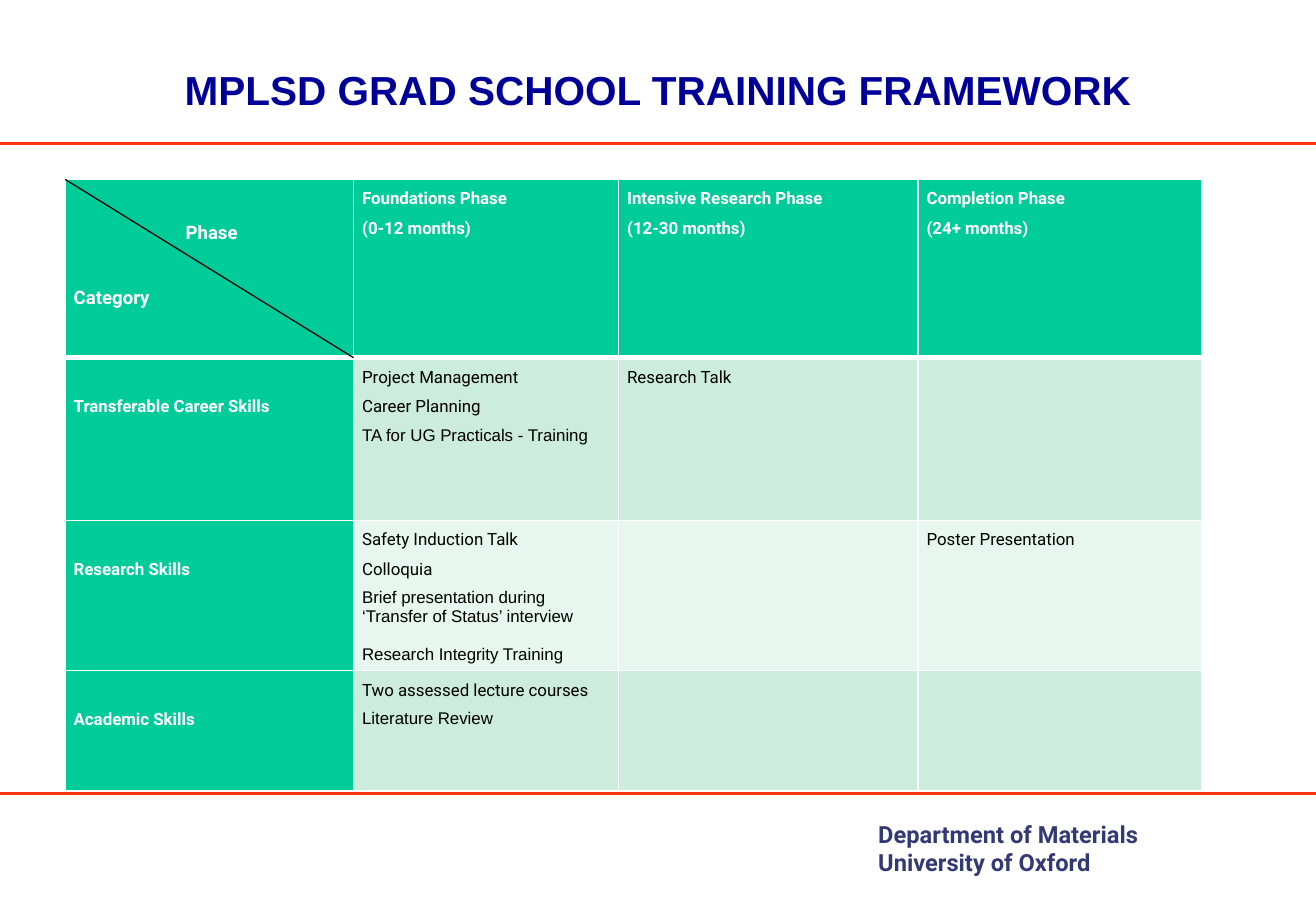
import pptx
import pptx.dml.color
import pptx.enum.shapes
import pptx.enum.text
import pptx.oxml
import pptx.oxml.ns
import pptx.util

Cm = pptx.util.Cm
Pt = pptx.util.Pt
RGBColor = pptx.dml.color.RGBColor
ALIGN = pptx.enum.text.PP_ALIGN
ANCHOR = pptx.enum.text.MSO_ANCHOR

WHITE = RGBColor(0xFF, 0xFF, 0xFF)
BLACK = RGBColor(0, 0, 0)
NAVY = RGBColor(0, 0, 0x99)
SLATE = RGBColor(0x33, 0x39, 0x75)
RED = RGBColor(0xFE, 0x37, 0x0F)
GREEN = RGBColor(0, 0xCC, 0x99)
MINT = RGBColor(0xCC, 0xEC, 0xDE)
PALE = RGBColor(0xE7, 0xF6, 0xEF)

WIDE, HIGH = Cm(27.51), Cm(19.05)
COLS = [Cm(6.03), Cm(5.54), Cm(6.26), Cm(5.94)]
ROWS = [Cm(3.73), Cm(3.4), Cm(3), Cm(2.52)]
SANS = {"face": "Arial"}
TIGHT = {"face": "Arial", "line": 1}

HEADS = [
    ("Foundations Phase", "(0-12 months)"),
    ("Intensive Research Phase", "(12-30 months)"),
    ("Completion Phase", "(24+ months)"),
]
SKILLS = [
    ("Transferable Career Skills", MINT, [
        [("Project Management", {}), ("Career Planning", {}),
         ("TA for UG Practicals - Training", SANS)],
        [("Research Talk", {})],
        [],
    ]),
    ("Research Skills", PALE, [
        [("Safety Induction Talk", {}), ("Colloquia", {}),
         ("Brief presentation during", SANS),
         ("‘Transfer of Status’ interview", TIGHT),
         ("Research Integrity Training", {**TIGHT, "before": 11})],
        [],
        [("Poster Presentation", {})],
    ]),
    ("Academic Skills", MINT, [
        [("Two assessed lecture courses", {}), ("Literature Review", SANS)],
        [],
        [],
    ]),
]


def write(frame, text, size=10, face="Roboto", color=BLACK, bold=False,
          align=ALIGN.JUSTIFY, line=1.5, before=0, indent=0):
    para = frame.paragraphs[0]
    if para.text:
        para = frame.add_paragraph()
    para.alignment = align
    para.line_spacing = line
    para.space_before = Pt(before)
    if indent:
        para._p.get_or_add_pPr().set("marL", str(indent))
    run = para.add_run()
    run.text = text
    font = run.font
    font.size, font.name, font.bold = Pt(size), face, bold
    font.color.rgb = color


def rule(slide, start, end, color, width):
    line = slide.shapes.add_connector(
        pptx.enum.shapes.MSO_CONNECTOR.STRAIGHT, *start, *end)
    line.line.color.rgb = color
    line.line.width = Pt(width)
    line._element.spPr.append(pptx.oxml.parse_xml(
        f'<a:effectLst {pptx.oxml.ns.nsdecls("a")}/>'))


def style(cell, fill, top=1, low=1):
    cell.margin_left = cell.margin_right = Cm(0.18)
    cell.margin_top = cell.margin_bottom = 0
    cell.fill.solid()
    cell.fill.fore_color.rgb = fill
    props = cell._tc.get_or_add_tcPr()
    sides = zip("LRTB", (1, 1, top, low))
    for spot, (side, width) in enumerate(sides):
        props.insert(spot, pptx.oxml.parse_xml(
            f'<a:ln{side} {pptx.oxml.ns.nsdecls("a")} w="{Pt(width)}">'
            f'<a:solidFill><a:srgbClr val="{WHITE}"/></a:solidFill>'
            f'</a:ln{side}>'))


def title(slide, left, top, width, height):
    head = slide.shapes.title
    head.left, head.top, head.width, head.height = left, top, width, height
    head.text_frame.vertical_anchor = ANCHOR.MIDDLE
    write(head.text_frame, "MPLSD GRAD SCHOOL TRAINING FRAMEWORK", size=24,
          color=NAVY, bold=True, align=ALIGN.CENTER, line=1, **SANS)


def grid(slide, left, top, width, height):
    table = slide.shapes.add_table(
        len(ROWS), len(COLS), left, top, width, height).table
    for col, size in zip(table.columns, COLS):
        col.width = size
    for row, size in zip(table.rows, ROWS):
        row.height = size

    label = {"color": WHITE, "bold": True}
    corner = table.cell(0, 0)
    style(corner, GREEN, low=3)
    corner.margin_top = Cm(0.68)
    write(corner.text_frame, "Phase", size=11, indent=Cm(2.34), **label)
    write(corner.text_frame, "Category", size=11, before=19.3, **label)
    for col, lines in enumerate(HEADS, 1):
        cell = table.cell(0, col)
        style(cell, GREEN, low=3)
        for text in lines:
            write(cell.text_frame, text, **label)

    for row, (name, band, cells) in enumerate(SKILLS, 1):
        edge = 3 if row == 1 else 1
        cell = table.cell(row, 0)
        style(cell, GREEN, top=edge)
        cell.margin_top = Cm(0.62)
        write(cell.text_frame, name, **label)
        for col, lines in enumerate(cells, 1):
            cell = table.cell(row, col)
            style(cell, band, top=edge)
            for text, form in lines:
                write(cell.text_frame, text, **form)

    rule(slide, (left, top), (left + COLS[0], top + ROWS[0]), BLACK, 0.75)


def footer(slide, left, top, width, height):
    frame = slide.shapes.add_textbox(left, top, width, height).text_frame
    frame.word_wrap = True
    for text in ("Department of Materials", "University of Oxford"):
        write(frame, text, size=14, color=SLATE, bold=True,
              align=ALIGN.LEFT, line=1)


def main():
    deck = pptx.Presentation()
    deck.slide_width, deck.slide_height = WIDE, HIGH
    slide = deck.slides.add_slide(deck.slide_layouts[5])
    for y in (Cm(3), Cm(16.59)):
        rule(slide, (0, y), (WIDE, y), RED, 1.5)
    footer(slide, Cm(18.11), Cm(17.02), Cm(6.65), Cm(1.45))
    title(slide, Cm(2.11), Cm(0.81), Cm(23.29), Cm(2.11))
    grid(slide, Cm(1.36), Cm(3.75), sum(COLS), sum(ROWS))
    deck.save("out.pptx")


if __name__ == "__main__":
    main()
